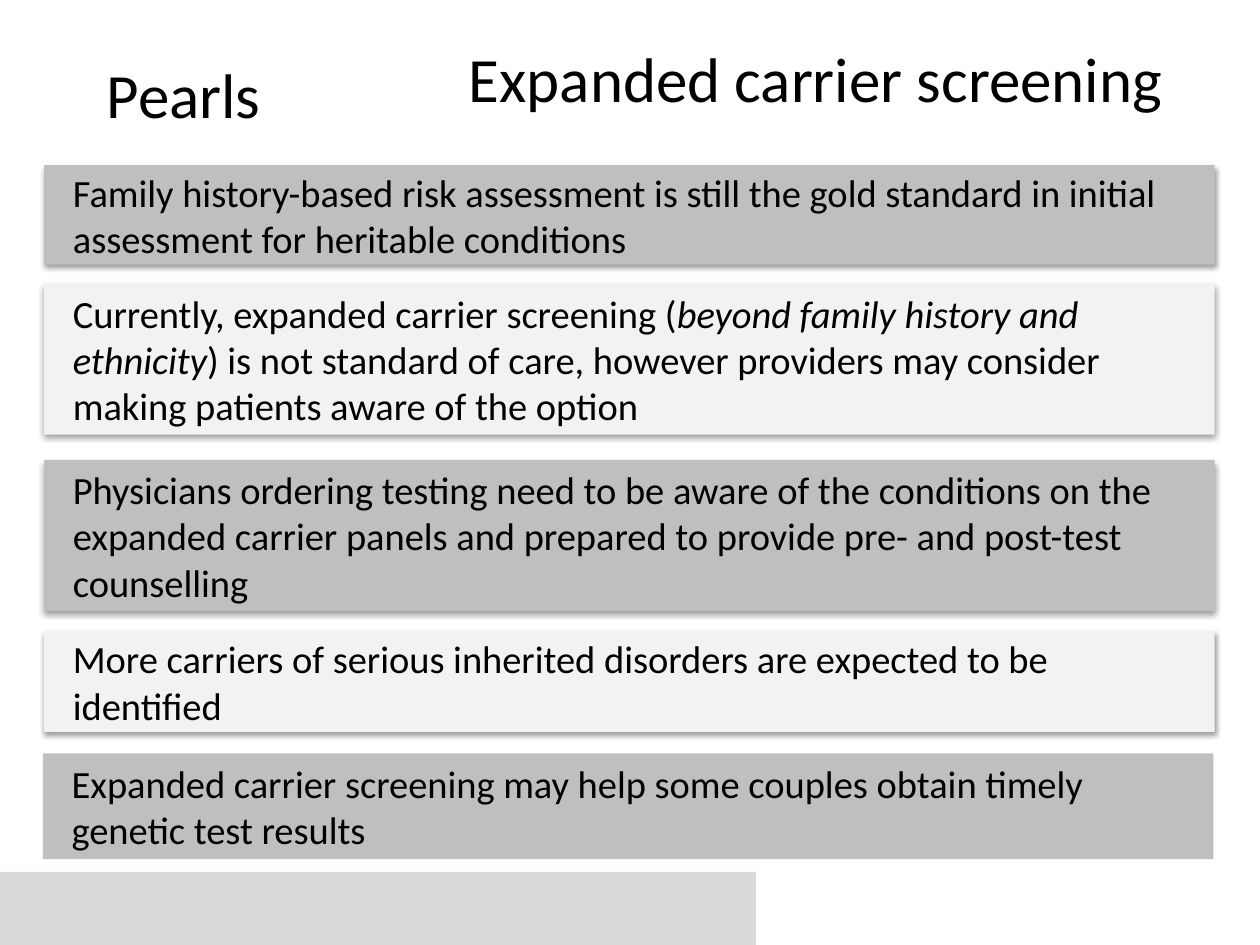
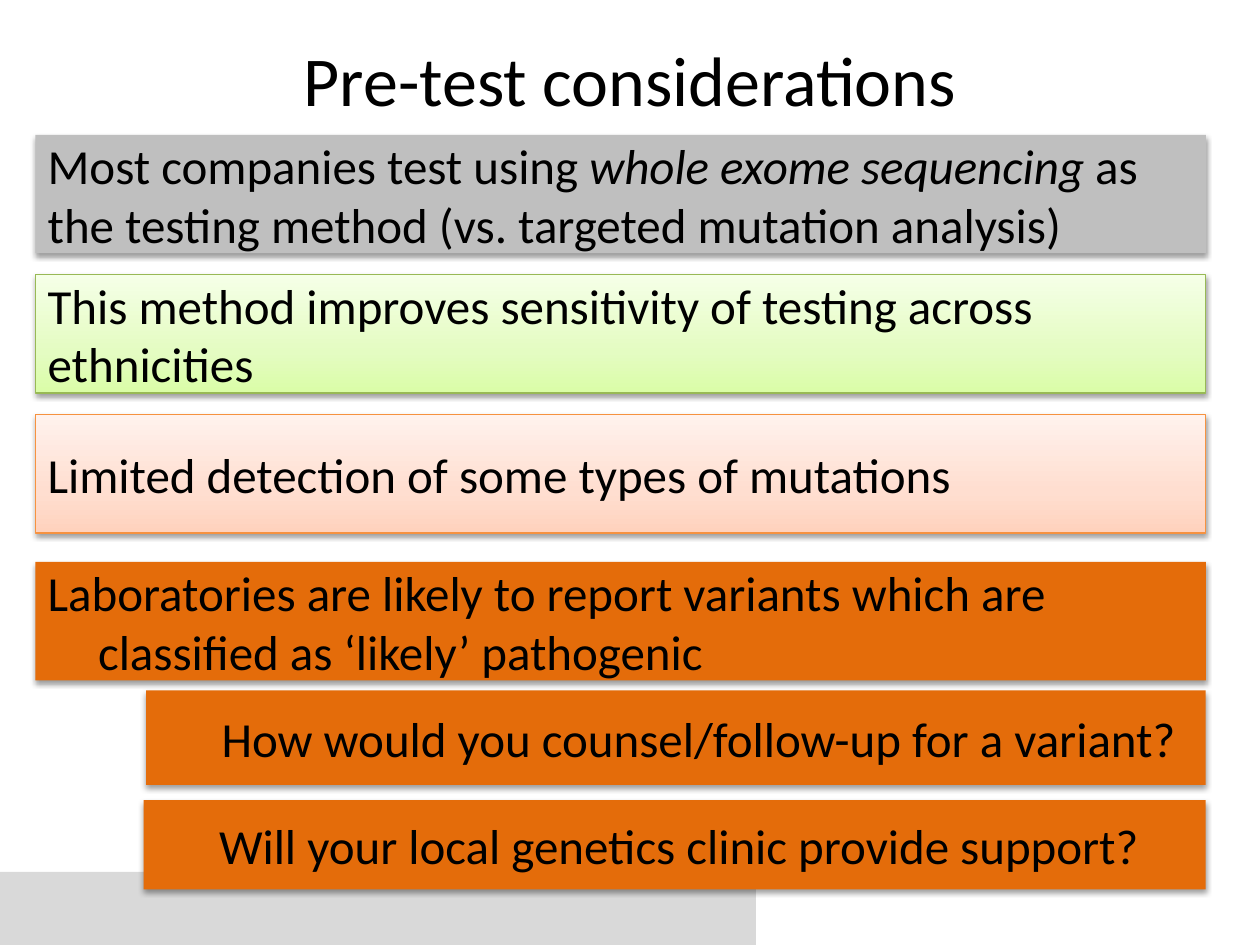
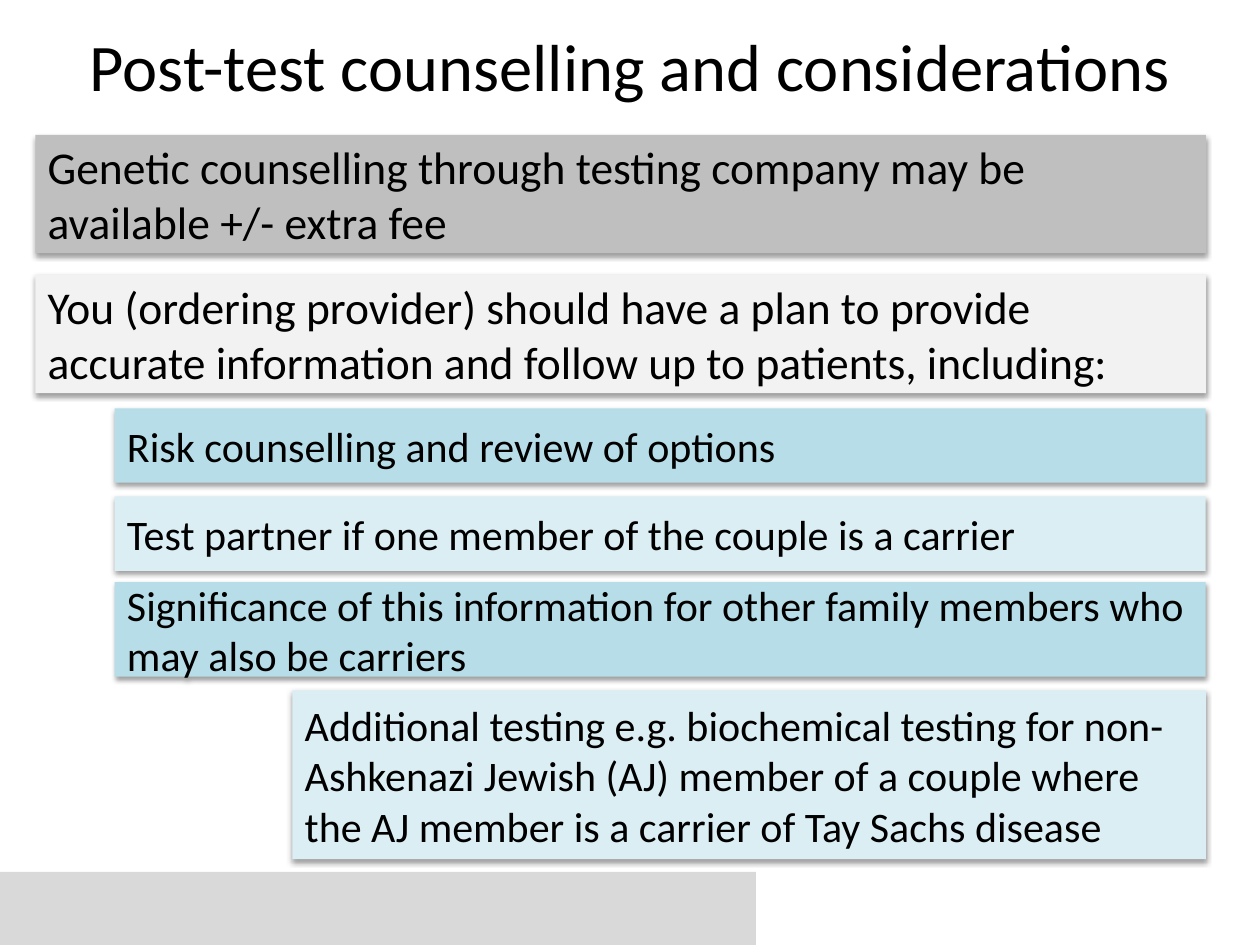
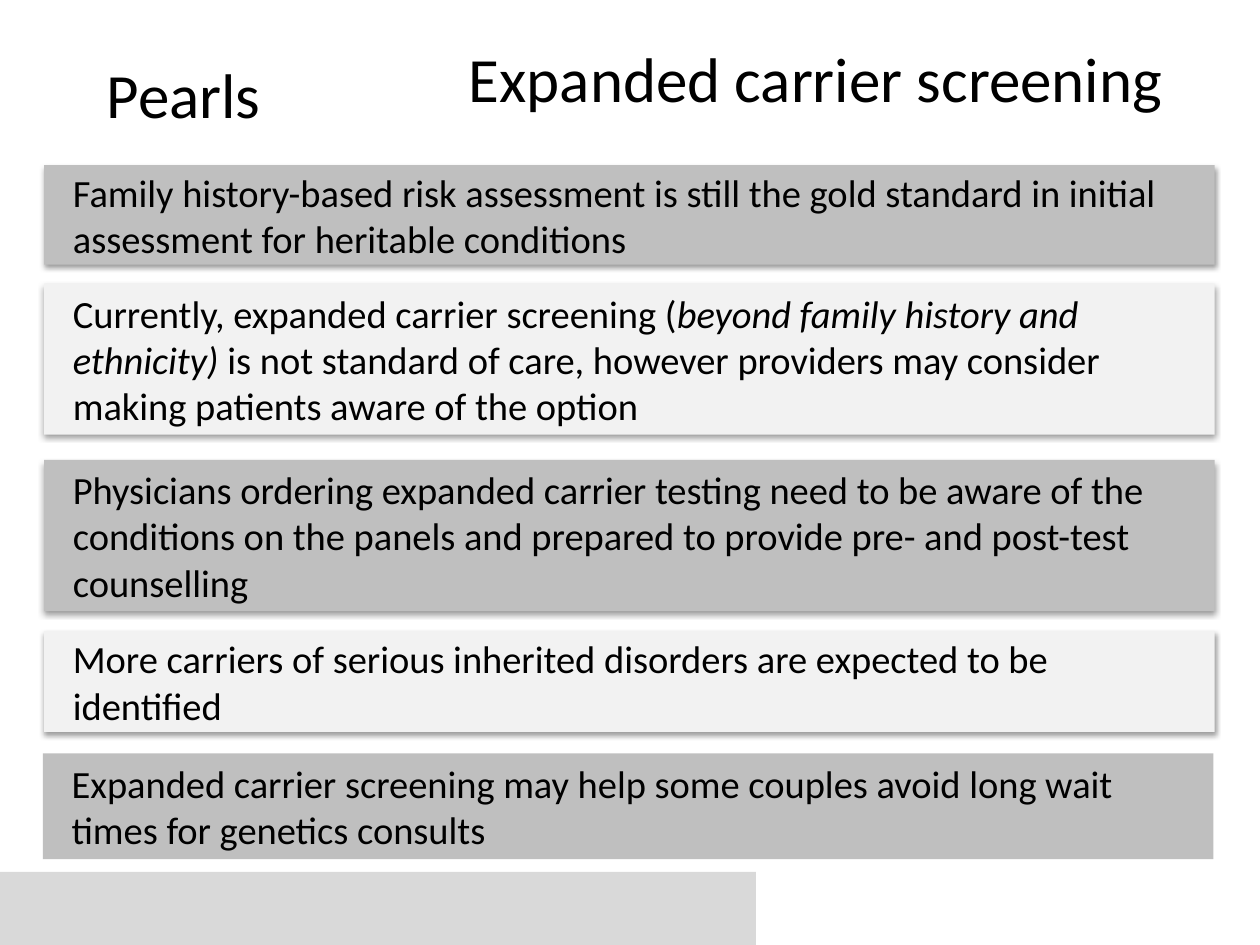
from copy import deepcopy
from lxml.etree import SubElement
from pptx import Presentation
from pptx.dml.color import RGBColor
from pptx.enum.shapes import MSO_SHAPE
from pptx.enum.text import MSO_ANCHOR, MSO_AUTO_SIZE, PP_ALIGN
from pptx.oxml.ns import qn
from pptx.util import Inches, Pt

WIDE, HIGH = Inches(10), Inches(7.5)
COLS, ROWS = 100, 75
FONT = "Calibri"
HUES = {
    "ink": "000000", "band": "D9D9D9", "gray": "BFBFBF", "pale": "F2F2F2",
    "rust": "E46C0A", "blue": "B7DEE8", "ice": "DBEEF4",
}
FADES = {
    "lime": ("98B955", ("DAFDA7", "E4FCC2", "F5FFE7")),
    "peach": ("F69240", ("FFD2BD", "FFDED0", "FFF2ED")),
}
STOPS = (0, 0.35, 1)
HEAD = (5, 0, 90, 12.5)
STACK = (2.8, 10.7, 92.9, 59.9)
PEARLS = (3.5, 13.1, 92.9, 55.1)


def grid(left, top, width, height):
    """Turn columns and rows of the slide grid into lengths."""
    col, row = WIDE / COLS, HIGH / ROWS
    return [round(n) for n in (left * col, top * row, width * col, height * row)]


def tint(hue):
    """Make a colour from a hex string."""
    return RGBColor.from_string(hue)


def write(frame, text, size, align=PP_ALIGN.LEFT):
    """Write one paragraph, with the parts between asterisks in italics."""
    frame.word_wrap = True
    frame.auto_size = MSO_AUTO_SIZE.NONE
    para = frame.paragraphs[0]
    para.alignment = align
    for turn, part in enumerate(text.split("*")):
        run = para.add_run()
        run.text = part
        font = run.font
        font.name, font.size, font.italic = FONT, Pt(size), turn % 2 == 1
        font.color.rgb = tint(HUES["ink"])
    return para


def block(slide, box, hue):
    """Draw a flat or faded rectangle without a shadow."""
    shape = slide.shapes.add_shape(MSO_SHAPE.RECTANGLE, *grid(*box))
    shape.shadow.inherit = False
    if hue in FADES:
        edge, fades = FADES[hue]
        shape.fill.gradient()
        shape.fill.gradient_angle = 90
        stops = shape.element.find(".//" + qn("a:gsLst"))
        stops.append(deepcopy(stops[0]))
        for stop, spot, fade in zip(shape.fill.gradient_stops, STOPS, fades):
            stop.position, stop.color.rgb = spot, tint(fade)
        shape.line.color.rgb = tint(edge)
        shape.line.width = Pt(0.75)
    else:
        shape.fill.solid()
        shape.fill.fore_color.rgb = tint(HUES[hue])
        shape.line.fill.background()
    return shape


def shade(shape):
    """Give a shape a soft shadow below it."""
    effect = shape.element.find(".//" + qn("a:effectLst"))
    outer = SubElement(effect, qn("a:outerShdw"), blurRad=str(Pt(3.1)),
                       dist=str(Pt(1.6)), dir="5400000", rotWithShape="0")
    color = SubElement(outer, qn("a:srgbClr"), val=HUES["ink"])
    SubElement(color, qn("a:alpha"), val="38000")


def bar(slide, box, hue, text, size, left=0, hang=0, lift=True):
    """Draw a bar with its text, indented in inches."""
    shape = block(slide, box, hue)
    if lift:
        shade(shape)
    shape.text_frame.vertical_anchor = MSO_ANCHOR.MIDDLE
    para = write(shape.text_frame, text, size)
    props = para._p.get_or_add_pPr()
    props.set("marL", str(Inches(left)))
    props.set("indent", str(Inches(hang)))


def title(slide, text, size, box=HEAD, align=PP_ALIGN.CENTER, anchor=MSO_ANCHOR.MIDDLE):
    """Place and format the title."""
    head = slide.shapes.title
    head.left, head.top, head.width, head.height = grid(*box)
    head.text_frame.vertical_anchor = anchor
    write(head.text_frame, text, size, align)


def stack(slide, box, bars):
    """Stack bars that share the right edge of the box."""
    left, top, width, _ = box
    for inset, drop, height, hue, text, size, *dents in bars:
        place = (left + inset, top + drop, width - inset, height)
        bar(slide, place, hue, text, size, *dents)


def pearls(slide, box, texts):
    """Fill a slide of key points in alternating grays."""
    title(slide, "Expanded carrier screening", 36, (36.2, 2.6, 60.2, 7.1),
          PP_ALIGN.LEFT, MSO_ANCHOR.TOP)
    label = slide.shapes.add_textbox(*grid(7.5, 3.9, 15.7, 7.1))
    write(label.text_frame, "Pearls", 36)
    left, top, width, _ = box
    spans = ((0, 7.9), (9.4, 12), (23.4, 12), (37, 8), (46.7, 8.4))
    for turn, ((drop, height), text) in enumerate(zip(spans, texts)):
        last = turn == len(spans) - 1
        place = (left - 0.1 * last, top + drop, width, height)
        bar(slide, place, ("gray", "pale")[turn % 2], text, 22, 0.13, 0, not last)


def before(slide):
    """Fill the slide on what to weigh before a test."""
    title(slide, "Pre-test considerations", 40)
    stack(slide, STACK, (
        (0, 0, 9.4, "gray", "Most companies test using *whole exome sequencing *"
         "as the testing method (vs. targeted mutation analysis)", 28),
        (0, 11.1, 9.4, "lime",
         "This method improves sensitivity of testing across ethnicities", 28),
        (0, 22.2, 9.4, "peach", "Limited detection of some types of mutations", 28),
        (0, 33.9, 9.4, "rust", "Laboratories are likely to report variants which are "
         "classified as ‘likely’ pathogenic", 28, 0.4, -0.4),
        (8.8, 44.1, 7.5, "rust", "How would you counsel/follow-up for a variant?", 28, 0.5),
        (8.6, 52.8, 7.1, "rust", "Will your local genetics clinic provide support?", 28, 0.5),
    ))


def after(slide):
    """Fill the slide on what to do after a test."""
    left, top, width, height = HEAD
    title(slide, "Post-test counselling and considerations", 38,
          (left, top - 1.1, width, height))
    stack(slide, STACK, (
        (0, 0, 9.4, "gray", "Genetic counselling through testing company may be "
         "available +/- extra fee", 26),
        (0, 11.1, 9.4, "pale", "You (ordering provider) should have a plan to provide "
         "accurate information and follow up to patients, including:", 26),
        (6.3, 21.7, 5.9, "blue", "Risk counselling and review of options", 24),
        (6.3, 28.7, 5.9, "ice", "Test partner if one member of the couple is a carrier", 24),
        (6.3, 35.5, 7.5, "blue", "Significance of this information for other family "
         "members who may also be carriers", 24),
        (20.4, 44.1, 13.4, "ice", "Additional testing e.g. biochemical testing for "
         "non-Ashkenazi Jewish (AJ) member of a couple where the AJ member is a "
         "carrier of Tay Sachs disease", 24),
    ))


def footer(slide, layout):
    """Move one gray band to the layout that all slides share."""
    band = block(slide, (0, 69.2, 60, 5.8), "band")
    layout.shapes[0].element.addprevious(band.element)


def main():
    """Build the slides and save them."""
    deck = Presentation()
    deck.slide_width, deck.slide_height = WIDE, HIGH
    layout = deck.slide_layouts[5]
    for spare in list(layout.placeholders)[1:]:
        spare.element.getparent().remove(spare.element)
    slides = [deck.slides.add_slide(layout) for _ in range(4)]
    footer(slides[0], layout)
    family = ("Family history-based risk assessment is still the gold standard in "
              "initial assessment for heritable conditions")
    option = ("Currently, expanded carrier screening (*beyond family history and "
              "ethnicity{}is not standard of care, however providers may consider "
              "making patients aware of the option")
    order = ("Physicians ordering {}testing need to be aware of the conditions on the "
             "{}panels and prepared to provide pre- and post-test counselling")
    more = "More carriers of serious inherited disorders are expected to be identified"
    help = "Expanded carrier screening may help some couples {}"
    extra = "expanded carrier "
    pearls(slides[0], PEARLS, (
        family, option.format("*) "), order.format("", extra), more,
        help.format("obtain timely genetic test results")))
    before(slides[1])
    after(slides[2])
    pearls(slides[3], PEARLS, (
        family, option.format(") *"), order.format(extra, ""), more,
        help.format("avoid long wait times for genetics consults")))
    deck.save("out.pptx")


if __name__ == "__main__":
    main()
